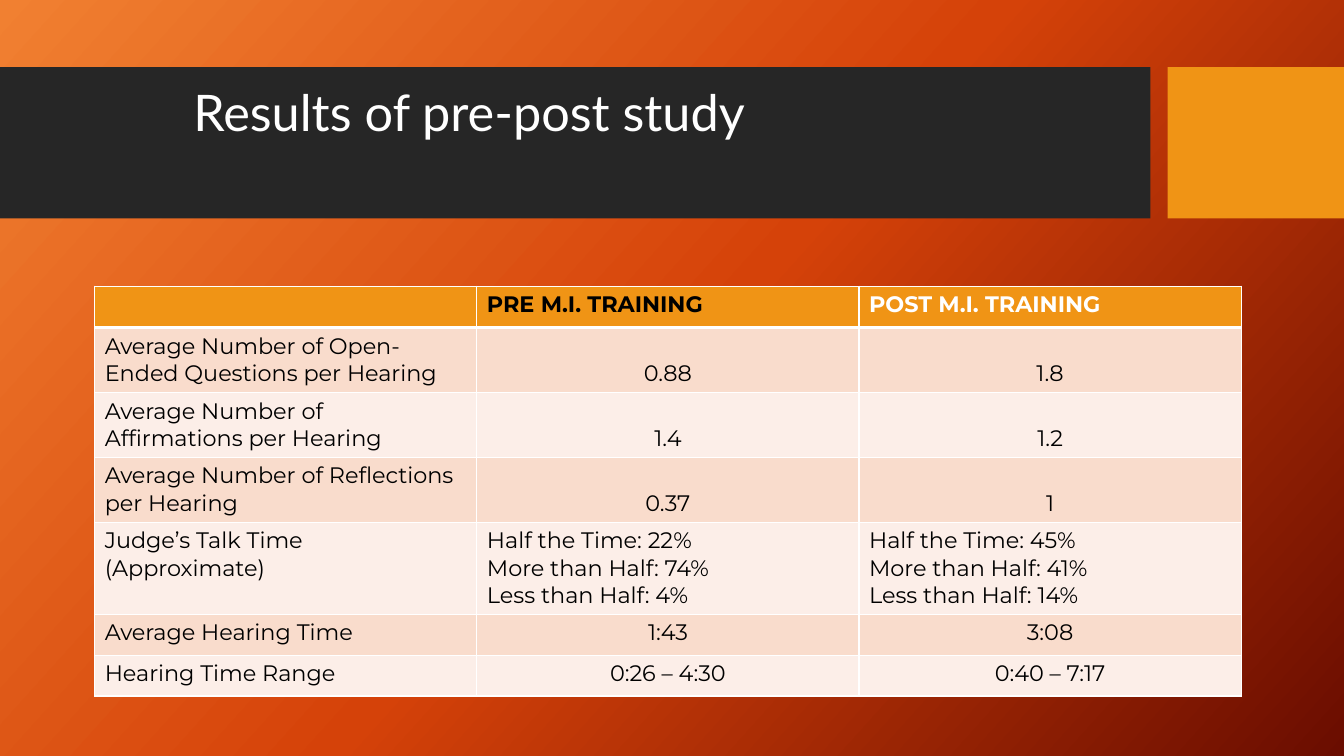
from pptx import Presentation
from pptx.dml.color import RGBColor
from pptx.enum.shapes import MSO_SHAPE
from pptx.enum.text import MSO_ANCHOR, PP_ALIGN
from pptx.oxml import parse_xml
from pptx.oxml.ns import nsdecls, qn
from pptx.util import Inches, Pt

RECT = MSO_SHAPE.RECTANGLE
TOP, MIDDLE, BOTTOM = MSO_ANCHOR.TOP, MSO_ANCHOR.MIDDLE, MSO_ANCHOR.BOTTOM
LEFT, CENTER = PP_ALIGN.LEFT, PP_ALIGN.CENTER

# The slide is a grid of 40 columns by 45 rows
WIDE, HIGH = Inches(13.33), Inches(7.5)
COL, ROW = WIDE / 40, HIGH / 45

WHITE, BLACK = "FFFFFF", "000000"
DARK, AMBER = "262626", "F09415"
BANDS = ["F9DCCC", "FCEEE8"]
GLOW = [(0, "F18031"), (50, "D54209"), (100, "6A0D00")]

# Text of each row, its height in grid rows, and the place of its values
HEADS = ["", "PRE M.I. TRAINING", "POST M.I. TRAINING"]
BODY = [
    (["Average Number of Open-Ended Questions per Hearing", "0.88", "1.8"],
     3.86, BOTTOM, CENTER),
    (["Average Number of Affirmations per Hearing", "1.4", "1.2"],
     3.86, BOTTOM, CENTER),
    (["Average Number of Reflections per Hearing", "0.37", "1"],
     3.86, BOTTOM, CENTER),
    (["Judge’s Talk Time (Approximate)",
      "Half the Time: 22%\nMore than Half: 74%\nLess than Half: 4%",
      "Half the Time: 45%\nMore than Half: 41%\nLess than Half: 14%"],
     5.48, TOP, LEFT),
    (["Average Hearing Time", "1:43", "3:08"], 2.44, TOP, CENTER),
    (["Hearing Time Range", "0:26 – 4:30", "0:40 – 7:17"], 2.44, TOP, CENTER),
]


def color(code):
    return RGBColor.from_string(code)


def grid(left, top, wide, high):
    return int(left * COL), int(top * ROW), int(wide * COL), int(high * ROW)


def style(para, face, size, ink, bold=False):
    font = para.font
    font.name, font.size, font.bold = face, Pt(size), bold
    font.color.rgb = color(ink)


def backdrop(slide):
    fill = slide.background.fill
    fill.gradient()
    fill.gradient_angle = 360 - 42
    stops = slide.element.find(".//" + qn("a:gsLst"))
    for stop in list(stops):
        stops.remove(stop)
    for share, code in GLOW:
        stops.append(parse_xml(
            f'<a:gs {nsdecls("a")} pos="{share * 1000}">'
            f'<a:srgbClr val="{code}"/></a:gs>'))


def block(slide, place, code):
    shape = slide.shapes.add_shape(RECT, *grid(*place))
    shape.shadow.inherit = False
    shape.fill.solid()
    shape.fill.fore_color.rgb = color(code)
    shape.line.fill.background()


def title(slide, place, text):
    frame = slide.shapes.add_textbox(*grid(*place)).text_frame
    frame.word_wrap = True
    frame.vertical_anchor = MIDDLE
    para = frame.paragraphs[0]
    para.text = text
    para.line_spacing = 0.9
    style(para, "Lato", 36, WHITE)


def border(cell, top, base):
    props = cell._tc.get_or_add_tcPr()
    sides = [("lnL", 1), ("lnR", 1), ("lnT", top), ("lnB", base)]
    for spot, (side, width) in enumerate(sides):
        props.insert(spot, parse_xml(
            f'<a:{side} {nsdecls("a")} w="{Pt(width)}"><a:solidFill>'
            f'<a:srgbClr val="{WHITE}"/></a:solidFill></a:{side}>'))


def write(cell, text, back, ink=BLACK, bold=False, anchor=TOP, align=LEFT):
    cell.fill.solid()
    cell.fill.fore_color.rgb = color(back)
    cell.vertical_anchor = anchor
    cell.text_frame.text = text
    for para in cell.text_frame.paragraphs:
        para.alignment = align
        style(para, "Montserrat", 16, ink, bold)


def results(slide, left, top, wide):
    highs = [2.46] + [high for _, high, _, _ in BODY]
    place = grid(left, top, wide, sum(highs))
    table = slide.shapes.add_table(len(highs), len(HEADS), *place).table
    for col in table.columns:
        col.width = int(wide * COL / len(HEADS))
    for row, high in zip(table.rows, highs):
        row.height = int(high * ROW)

    # Header row
    for n, (text, ink) in enumerate(zip(HEADS, [BLACK, BLACK, WHITE])):
        cell = table.cell(0, n)
        write(cell, text, AMBER, ink, bold=True)
        border(cell, 1, 3)

    # Banded rows: label first, then the two values
    for r, (texts, _, anchor, align) in enumerate(BODY, 1):
        for n, text in enumerate(texts):
            cell = table.cell(r, n)
            spot = {"anchor": anchor, "align": align} if n else {}
            write(cell, text, BANDS[(r - 1) % 2], **spot)
            border(cell, 3 if r == 1 else 1, 1)


def main():
    deck = Presentation()
    deck.slide_width, deck.slide_height = WIDE, HIGH
    slide = deck.slides.add_slide(deck.slide_layouts[6])
    backdrop(slide)
    block(slide, (0, 4, 34.24, 9), DARK)
    block(slide, (34.75, 4, 5.25, 9), AMBER)
    title(slide, (5.46, 1.08, 32.9, 11.52), "Results of pre-post study")
    results(slide, 2.82, 17.04, 34.12)
    deck.save("out.pptx")


if __name__ == "__main__":
    main()
